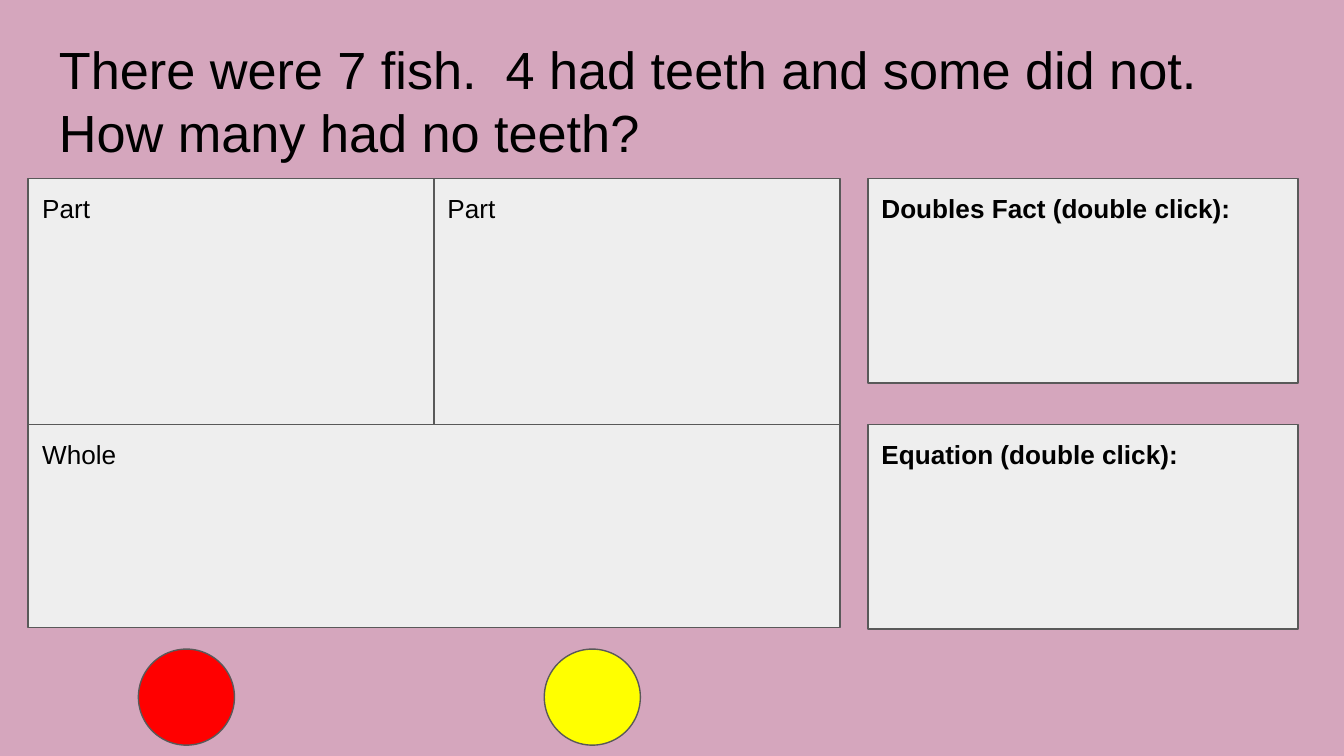
from pptx import Presentation
from pptx.dml.color import RGBColor
from pptx.enum.shapes import MSO_CONNECTOR as Connector, MSO_SHAPE as Shape
from pptx.enum.text import MSO_ANCHOR as Anchor
from pptx.oxml.ns import qn
from pptx.util import Pt
from lxml.etree import SubElement

PINK = RGBColor(0xD5, 0xA6, 0xBD)
PANEL = RGBColor(0xEE, 0xEE, 0xEE)
OUTLINE = RGBColor(0x59, 0x59, 0x59)
BLACK = RGBColor(0x00, 0x00, 0x00)
RED = RGBColor(0xFF, 0x00, 0x00)
YELLOW = RGBColor(0xFF, 0xFF, 0x00)

FONT = "Arial"
SCALE = 4572
WIDTH, HEIGHT = 2000, 1125
TOP_ROW, BOTTOM_ROW = 266, 632
MAT_LEFT, MAT_WIDTH, MAT_MIDDLE = 42, 1208, 646
CARD_LEFT, CARD_WIDTH, CARD_HEIGHT = 1292, 640, 304
COUNTER = 143


def px(*lengths):
    """Turn pixel lengths into EMU."""
    return [length * SCALE for length in lengths]


def write(frame, text, size=14, bold=False, anchor=Anchor.TOP):
    """Fill a text frame with one formatted paragraph."""
    frame.word_wrap = True
    frame.vertical_anchor = anchor
    frame.margin_left, frame.margin_top, frame.margin_right, frame.margin_bottom = px(20, 20, 20, 20)
    run = frame.paragraphs[0].add_run()
    run.text = text
    run.font.name = FONT
    run.font.size = Pt(size)
    run.font.bold = bold
    run.font.color.rgb = BLACK


class SlideBuilder:
    """Holds the outline style and the current slide."""

    def __init__(self, slide):
        self.slide = slide
        self.line_color = OUTLINE
        self.line_width = Pt(0.75)
        slide.background.fill.solid()
        slide.background.fill.fore_color.rgb = PINK

    def outline(self, item):
        item.line.color.rgb = self.line_color
        item.line.width = self.line_width

    def shape(self, kind, left, top, width, height, fill):
        shape = self.slide.shapes.add_shape(kind, *px(left, top, width, height))
        shape.shadow.inherit = False
        shape.fill.solid()
        shape.fill.fore_color.rgb = fill
        self.outline(shape)

    def line(self, start_x, start_y, end_x, end_y):
        connector = self.slide.shapes.add_connector(
            Connector.STRAIGHT, *px(start_x, start_y, end_x, end_y))
        self.outline(connector)
        SubElement(connector._element.spPr, qn("a:effectLst"))

    def text(self, text, left, top, width, height, **style):
        box = self.slide.shapes.add_textbox(*px(left, top, width, height))
        write(box.text_frame, text, **style)


def main():
    """Build the fish story problem slide."""
    presentation = Presentation()
    presentation.slide_width, presentation.slide_height = px(WIDTH, HEIGHT)
    builder = SlideBuilder(presentation.slides.add_slide(presentation.slide_layouts[6]))

    builder.text("There were 7 fish.  4 had teeth and some did not.  How many had no teeth?",
                 68, 33, 1864, 232, size=28, anchor=Anchor.MIDDLE)

    for left, color in ((206, RED), (810, YELLOW)):
        builder.shape(Shape.OVAL, left, 966, COUNTER, COUNTER, color)

    for top, height in ((TOP_ROW, 366), (BOTTOM_ROW, 302)):
        builder.shape(Shape.RECTANGLE, MAT_LEFT, top, MAT_WIDTH, height, PANEL)
    builder.line(MAT_MIDDLE, TOP_ROW, MAT_MIDDLE, BOTTOM_ROW)
    for label, left, top, width in (("Part", MAT_LEFT + 1, TOP_ROW, 122),
                                    ("Part", MAT_MIDDLE, TOP_ROW, 122),
                                    ("Whole", MAT_LEFT + 1, BOTTOM_ROW, 158)):
        builder.text(label, left, top, width, 76)

    for label, top in (("Doubles Fact (double click):", TOP_ROW),
                       ("Equation (double click):", BOTTOM_ROW)):
        builder.shape(Shape.RECTANGLE, CARD_LEFT, top, CARD_WIDTH, CARD_HEIGHT, PANEL)
        builder.text(label, CARD_LEFT, top, 574, 92, bold=True)

    presentation.save("out.pptx")


if __name__ == "__main__":
    main()
